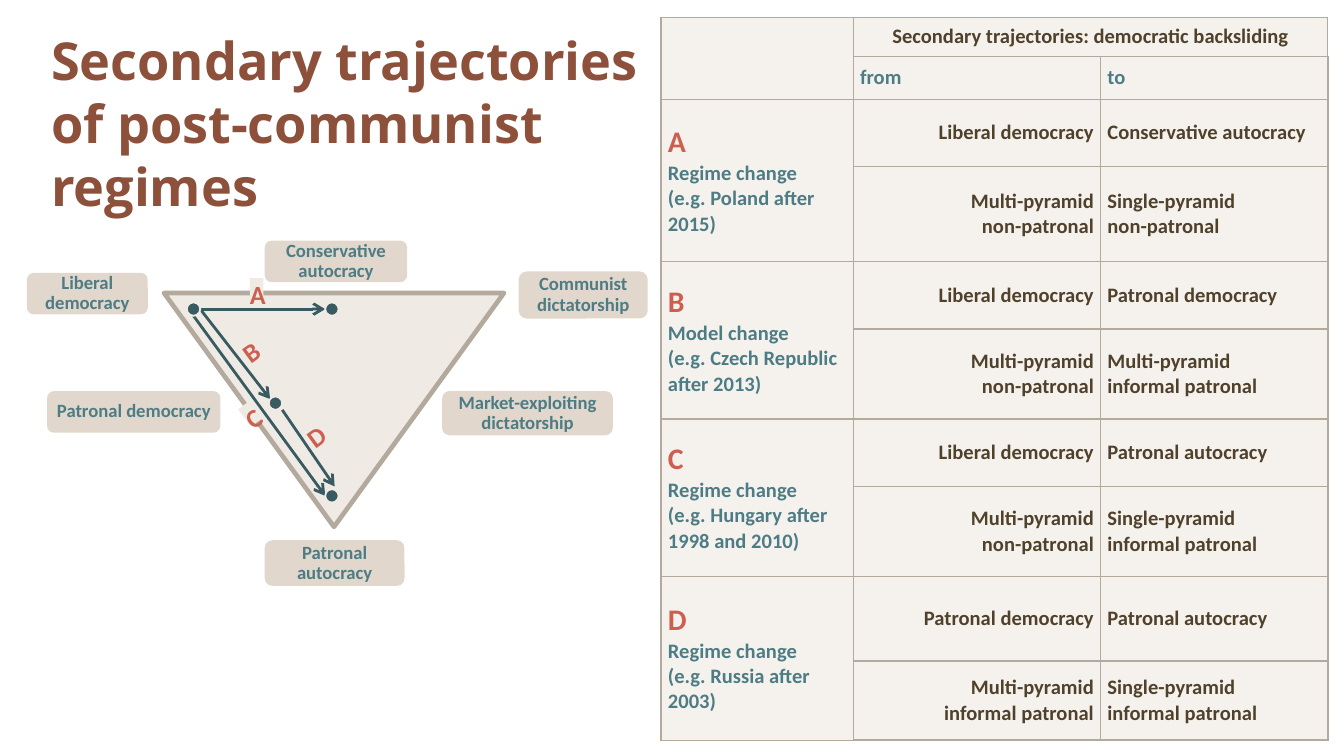
from lxml.etree import SubElement
from pptx import Presentation
from pptx.dml.color import RGBColor
from pptx.enum.shapes import MSO_CONNECTOR, MSO_SHAPE
from pptx.enum.text import MSO_ANCHOR, PP_ALIGN
from pptx.oxml import parse_xml
from pptx.oxml.ns import nsdecls, qn
from pptx.util import Inches, Pt

TITLE = "Secondary trajectories of post-communist regimes"
HEADING = "Secondary trajectories: democratic backsliding"
# letter, kind of change, example, then (from, to) for regime type and power structure
ROWS = [
    ("A", "Regime change", "(e.g. Poland after 2015)",
     [("Liberal democracy", "Conservative autocracy"),
      ("Multi-pyramid\nnon-patronal", "Single-pyramid\nnon-patronal")]),
    ("B", "Model change", "(e.g. Czech Republic after 2013)",
     [("Liberal democracy", "Patronal democracy"),
      ("Multi-pyramid\nnon-patronal", "Multi-pyramid\ninformal patronal")]),
    ("C", "Regime change", "(e.g. Hungary after 1998 and 2010)",
     [("Liberal democracy", "Patronal autocracy"),
      ("Multi-pyramid\nnon-patronal", "Single-pyramid\ninformal patronal")]),
    ("D", "Regime change", "(e.g. Russia after 2003)",
     [("Patronal democracy", "Patronal autocracy"),
      ("Multi-pyramid\ninformal patronal", "Single-pyramid\ninformal patronal")]),
]
COL_WIDTHS = [1.43, 1.84, 1.69]
ROW_HEIGHTS = [0.27, 0.32, 0.5, 0.71, 0.5, 0.67, 0.5, 0.67, 0.63, 0.59]
LABELS = [
    ("Communist dictatorship", 3.86, 2.02, 0.96, 0.35),
    ("Liberal democracy", 0.2, 2.03, 0.9, 0.31),
    ("Patronal autocracy", 1.97, 4.02, 1.04, 0.34),
    ("Conservative autocracy", 1.97, 1.79, 1.06, 0.31),
    ("Market-exploiting dictatorship", 3.29, 2.91, 1.27, 0.33),
    ("Patronal democracy", 0.35, 2.91, 1.29, 0.31),
]
ARROWS = [(1.44, 2.35, 2.42, 3.69), (1.49, 2.3, 2.01, 2.97),
          (2.1, 3.05, 2.49, 3.62), (1.49, 2.3, 2.42, 2.3)]
DOTS = [(1.39, 2.25), (2.42, 2.25), (2.42, 3.64), (2, 2.95)]
# letter, left, top, rotation, fill
LETTERS = [("A", 1.86, 2.07, 0, "EFEAE4"), ("B", 1.79, 2.51, 323.7, None),
           ("C", 1.81, 3, 323.7, "EFEAE4"), ("D", 2.27, 3.14, 323.7, None)]

SAND, EDGE, TEAL, RED, BROWN = "EFEAE4", "B3AA9D", "4D7C84", "CD5F50", "50412B"
LABEL_TEAL, DARK_TEAL = "4D7C85", "385A61"

prs = Presentation()
prs.slide_width = Inches(10)
prs.slide_height = prs.slide_width * 9 // 16
s = prs.slides.add_slide(prs.slide_layouts[5])


def rgb(color):
    return RGBColor.from_string(color)


def fade(parent, percent):
    """Make the solid fill held by parent partly transparent."""
    clr = parent.find(qn("a:solidFill")).find(qn("a:srgbClr"))
    SubElement(clr, qn("a:alpha")).set("val", str(percent * 1000))


def write(tf, lines, align=PP_ALIGN.LEFT, spacing=None, font="Calibri"):
    """Fill a text frame with (text, size, colour) paragraphs."""
    for i, (text, size, color) in enumerate(lines):
        p = tf.paragraphs[0] if i == 0 else tf.add_paragraph()
        p.alignment, p.line_spacing = align, spacing
        r = p.add_run()
        r.text = text
        for name, value in dict(name=font, size=Pt(size), bold=True).items():
            setattr(r.font, name, value)
        r.font.color.rgb = rgb(color)


def set_insets(obj, *sizes):
    for side, size in zip(("left", "top", "right", "bottom"), sizes):
        setattr(obj, f"margin_{side}", Inches(size))


def add_shape(kind, box, fill=None, line=None, width=1):
    sp = s.shapes.add_shape(kind, *map(Inches, box))
    sp.shadow.inherit = False
    if fill:
        sp.fill.solid()
        sp.fill.fore_color.rgb = rgb(fill)
    else:
        sp.fill.background()
    if line:
        sp.line.color.rgb = rgb(line)
        sp.line.width = Pt(width)
    else:
        sp.line.fill.background()
    return sp


def add_arrow(x1, y1, x2, y2):
    c = s.shapes.add_connector(MSO_CONNECTOR.STRAIGHT, *map(Inches, (x1, y1, x2, y2)))
    c.line.color.rgb = rgb(DARK_TEAL)
    c.line.width = Pt(1.5)
    SubElement(c.line._get_or_add_ln(), qn("a:tailEnd")).set("type", "arrow")
    SubElement(c._element.spPr, qn("a:effectLst"))


def style_cell(cell, row, col):
    cell.fill.solid()
    cell.fill.fore_color.rgb = rgb(SAND)
    cell.vertical_anchor = MSO_ANCHOR.MIDDLE
    set_insets(cell, *[0.05] * 4)
    # keeps empty cells from stretching their row
    SubElement(cell.text_frame.paragraphs[0]._p, qn("a:endParaRPr")).set("sz", "1000")
    tc_pr = cell._tc.get_or_add_tcPr()
    fade(tc_pr, 60)
    outer = {"L": col == 0, "R": col == len(COL_WIDTHS) - 1,
             "T": row == 0, "B": row == len(ROW_HEIGHTS) - 1}
    for i, (side, is_outer) in enumerate(outer.items()):
        tc_pr.insert(i, parse_xml(
            f'<a:ln{side} {nsdecls("a")} w="{Pt(1 if is_outer else 0.75)}">'
            f'<a:solidFill><a:srgbClr val="{EDGE}"/></a:solidFill></a:ln{side}>'))


def add_trajectory_table():
    box = (4.92, 0.13, sum(COL_WIDTHS), sum(ROW_HEIGHTS))
    table = s.shapes.add_table(len(ROW_HEIGHTS), len(COL_WIDTHS), *map(Inches, box)).table
    for col, width in zip(table.columns, COL_WIDTHS):
        col.width = Inches(width)
    for row, height in zip(table.rows, ROW_HEIGHTS):
        row.height = Inches(height)
    for r in range(len(ROW_HEIGHTS)):
        for c in range(len(COL_WIDTHS)):
            style_cell(table.cell(r, c), r, c)
    for r in range(0, len(ROW_HEIGHTS), 2):
        table.cell(r, 0).merge(table.cell(r + 1, 0))
    table.cell(0, 1).merge(table.cell(0, 2))

    write(table.cell(0, 1).text_frame, [(HEADING, 11, BROWN)], PP_ALIGN.CENTER)
    for c, text in enumerate(("from", "to"), 1):
        write(table.cell(1, c).text_frame, [(text, 11, TEAL)])
    for i, (letter, change, example, pairs) in enumerate(ROWS):
        top = 2 + 2 * i
        write(table.cell(top, 0).text_frame,
              [(letter, 16, RED), (change, 11, TEAL), (example, 11, TEAL)])
        for r, pair in enumerate(pairs, top):
            for c, (text, align) in enumerate(zip(pair, (PP_ALIGN.RIGHT, PP_ALIGN.LEFT)), 1):
                write(table.cell(r, c).text_frame,
                      [(line, 11, BROWN) for line in text.split("\n")], align)


title = s.shapes.title
title.left, title.top, title.width, title.height = map(Inches, (0.27, 0.14, 4.57, 0.94))
tf = title.text_frame
tf.word_wrap = True
tf.vertical_anchor = MSO_ANCHOR.TOP
set_insets(tf, 0.11, 0.07, 0.05, 0.05)
write(tf, [(TITLE, 28, "8D503B")], spacing=1.0, font="Open Sans")

triangle = add_shape(MSO_SHAPE.ISOSCELES_TRIANGLE, (1.22, 2.18, 2.53, 1.74), SAND, "B3A99D", 2.5)
triangle.rotation = 180

for text, *box in LABELS:
    sp = add_shape(MSO_SHAPE.ROUNDED_RECTANGLE, box, "C7B09A")
    fade(sp._element.spPr, 50)
    tf = sp.text_frame
    tf.word_wrap = True
    tf.vertical_anchor = MSO_ANCHOR.MIDDLE
    set_insets(tf, *[0.05] * 4)
    write(tf, [(text, 10, LABEL_TEAL)], PP_ALIGN.CENTER, 0.9)

add_trajectory_table()

for ends in ARROWS:
    add_arrow(*ends)
for x, y in DOTS:
    add_shape(MSO_SHAPE.OVAL, (x, y, 0.1, 0.1), DARK_TEAL, SAND)
for letter, x, y, angle, fill in LETTERS:
    sp = add_shape(MSO_SHAPE.RECTANGLE, (x, y, 0.1, 0.16), fill)
    sp.rotation = angle
    tf = sp.text_frame
    tf.word_wrap = True
    tf.vertical_anchor = MSO_ANCHOR.TOP
    set_insets(tf, 0, 0, 0, 0)
    write(tf, [(letter, 14, RED)], PP_ALIGN.CENTER)

prs.save("out.pptx")
